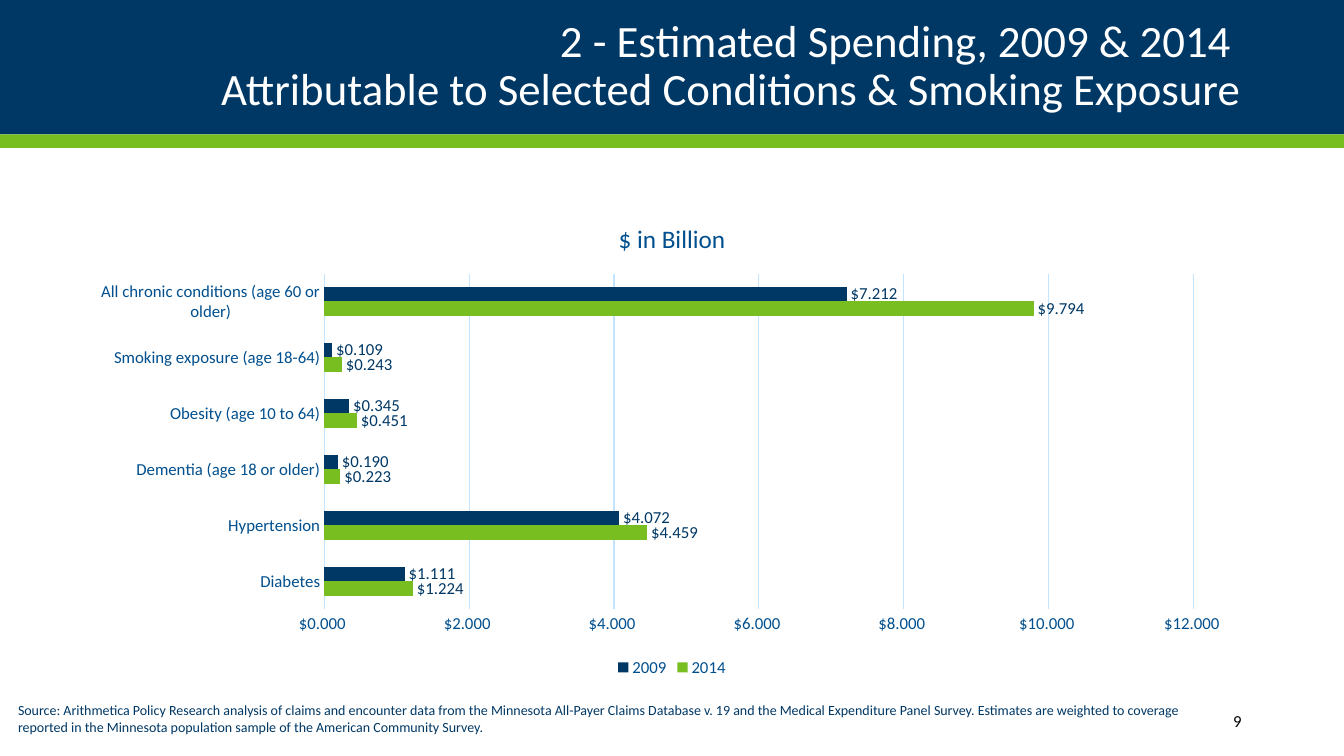
"""Build the slide on estimated spending by condition, 2009 and 2014."""
from lxml import etree
from pptx import Presentation
from pptx.chart.data import CategoryChartData
from pptx.dml.color import RGBColor
from pptx.enum.chart import XL_CHART_TYPE, XL_LABEL_POSITION, XL_LEGEND_POSITION, XL_TICK_MARK
from pptx.enum.shapes import MSO_SHAPE
from pptx.enum.text import MSO_ANCHOR, PP_ALIGN
from pptx.oxml.ns import qn
from pptx.util import Pt

BAR = XL_CHART_TYPE.BAR_CLUSTERED
OUTSIDE = XL_LABEL_POSITION.OUTSIDE_END
BOTTOM = XL_LEGEND_POSITION.BOTTOM
NO_TICK = XL_TICK_MARK.NONE
RECT = MSO_SHAPE.RECTANGLE
MIDDLE, TOP = MSO_ANCHOR.MIDDLE, MSO_ANCHOR.TOP
LEFT, RIGHT = PP_ALIGN.LEFT, PP_ALIGN.RIGHT

NAVY = RGBColor(0x00, 0x38, 0x65)
GREEN = RGBColor(0x78, 0xBE, 0x21)
BLUE = RGBColor(0x00, 0x4F, 0x8E)
PALE = RGBColor(0xC2, 0xE4, 0xFF)
WHITE = RGBColor(0xFF, 0xFF, 0xFF)
BLACK = RGBColor(0x00, 0x00, 0x00)

FONT = "Calibri"
MONEY = r'"$"#,##0.000_);[Red]\("$"#,##0.000\)'
TITLE = "2 - Estimated Spending, 2009 & 2014 \vAttributable to Selected Conditions & Smoking Exposure"
CHART_TITLE = "$ in Billion"
SOURCE = (
    "Source: Arithmetica Policy Research analysis of claims and encounter data from the "
    "Minnesota All-Payer Claims Database v. 19 and the Medical Expenditure Panel Survey. "
    "Estimates are weighted to coverage reported in the Minnesota population sample of the "
    "American Community Survey."
)
PAGE = "9"
SPENDING = [
    ("Diabetes", 1.224, 1.111),
    ("Hypertension", 4.459, 4.072),
    ("Dementia (age 18 or older)", 0.223, 0.190),
    ("Obesity (age 10 to 64)", 0.451, 0.345),
    ("Smoking exposure (age 18-64)", 0.243, 0.109),
    ("All chronic conditions (age 60 or older)", 9.794, 7.212),
]
YEARS = [("2014", GREEN), ("2009", NAVY)]

WIDTH, HEIGHT = 960, 540
BANDS = [(0, 96, NAVY), (96, 9.6, GREEN)]
TITLE_BOX = (66, 12, 828, 72)
CHART_BOX = (66, 144, 828, 342.7)
PAGE_BOX = (779, 500.5, 115, 29)
SOURCE_BOX = (5.8, 497.5, 849.6, 31.7)
PLOT = {"x": 0.2, "y": 0.15, "w": 0.75, "h": 0.7}


def points(box):
    return [Pt(v) for v in box]


def set_font(font, size, color):
    for name, value in {"name": FONT, "size": Pt(size), "bold": False}.items():
        setattr(font, name, value)
    font.color.rgb = color


def write(sp, text, size, color, align, anchor):
    tf = sp.text_frame
    tf.word_wrap = True
    tf.vertical_anchor = anchor
    p = tf.paragraphs[0]
    p.text = text
    p.alignment = align
    for r in p.runs:
        set_font(r.font, size, color)
    return p


def add_bands(slide):
    for top, height, color in BANDS:
        sp = slide.shapes.add_shape(RECT, *points((0, top, WIDTH, height)))
        sp.shadow.inherit = False
        sp.fill.solid()
        sp.fill.fore_color.rgb = color
        sp.line.fill.background()


def add_title(slide):
    sp = slide.shapes.title
    sp.left, sp.top, sp.width, sp.height = points(TITLE_BOX)
    p = write(sp, TITLE, 32, WHITE, RIGHT, MIDDLE)
    p.line_spacing = 0.9
    slide.shapes._spTree.append(sp._element)


def place_plot(chart):
    area = chart._chartSpace.chart.plotArea
    for old in area.findall(qn("c:layout")):
        area.remove(old)
    layout = etree.Element(qn("c:layout"))
    manual = etree.SubElement(layout, qn("c:manualLayout"))
    rules = {"layoutTarget": "inner", "xMode": "edge", "yMode": "edge", **PLOT}
    for name, value in rules.items():
        etree.SubElement(manual, qn(f"c:{name}")).set("val", str(value))
    area.insert(0, layout)


def add_spending_chart(slide):
    data = CategoryChartData(number_format=MONEY)
    data.categories = [row[0] for row in SPENDING]
    for i, (year, _) in enumerate(YEARS, 1):
        data.add_series(year, [row[i] for row in SPENDING])
    chart = slide.shapes.add_chart(BAR, *points(CHART_BOX), data).chart
    set_font(chart.font, 10, NAVY)

    p = chart.chart_title.text_frame.paragraphs[0]
    p.text = CHART_TITLE
    set_font(p.runs[0].font, 18, BLUE)

    chart.has_legend = True
    chart.legend.position = BOTTOM
    chart.legend.include_in_layout = False
    set_font(chart.legend.font, 12, BLUE)

    for axis in (chart.category_axis, chart.value_axis):
        axis.major_tick_mark = axis.minor_tick_mark = NO_TICK
        set_font(axis.tick_labels.font, 12, BLUE)
    values = chart.value_axis
    values.minimum_scale, values.maximum_scale, values.major_unit = 0, 12, 2
    values.tick_labels.number_format = MONEY
    values.tick_labels.number_format_is_linked = False
    values.format.line.fill.background()
    for line in (chart.category_axis.format.line, values.major_gridlines.format.line):
        line.color.rgb = PALE
        line.width = Pt(0.75)

    plot = chart.plots[0]
    plot.gap_width, plot.overlap, plot.vary_by_categories = 182, 0, False
    for series, (_, color) in zip(plot.series, YEARS):
        series.format.fill.solid()
        series.format.fill.fore_color.rgb = color
        labels = series.data_labels
        settings = {"show_value": True, "position": OUTSIDE,
                    "number_format": MONEY, "number_format_is_linked": False}
        for name, value in settings.items():
            setattr(labels, name, value)
        set_font(labels.font, 12, NAVY)
    place_plot(chart)


def main():
    prs = Presentation()
    prs.slide_width, prs.slide_height = Pt(WIDTH), Pt(HEIGHT)
    slide = prs.slides.add_slide(prs.slide_layouts[5])
    add_bands(slide)
    add_title(slide)
    add_spending_chart(slide)
    for box, text, size, color, align, anchor in (
        (PAGE_BOX, PAGE, 12, BLACK, RIGHT, MIDDLE),
        (SOURCE_BOX, SOURCE, 10, NAVY, LEFT, TOP),
    ):
        write(slide.shapes.add_textbox(*points(box)), text, size, color, align, anchor)
    prs.save("out.pptx")


if __name__ == "__main__":
    main()
